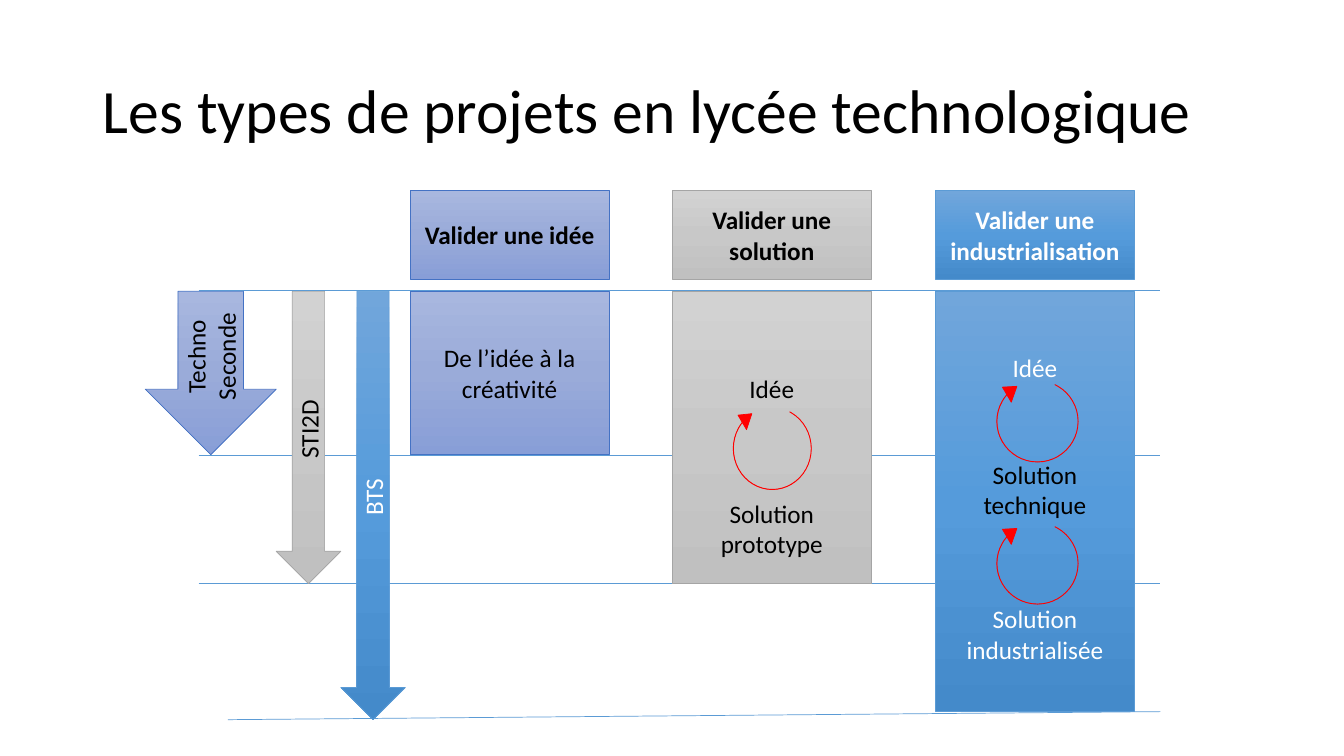
from copy import deepcopy

from lxml import etree
from pptx import Presentation
from pptx.dml.color import RGBColor
from pptx.enum.shapes import MSO_CONNECTOR, MSO_SHAPE
from pptx.enum.text import MSO_ANCHOR, MSO_AUTO_SIZE, PP_ALIGN
from pptx.oxml.ns import qn
from pptx.util import Inches, Pt

RECT, DOWN_ARROW, LOOP = MSO_SHAPE.RECTANGLE, MSO_SHAPE.DOWN_ARROW, MSO_SHAPE.CIRCULAR_ARROW
STRAIGHT = MSO_CONNECTOR.STRAIGHT
LEFT, CENTER = PP_ALIGN.LEFT, PP_ALIGN.CENTER
TOP, MIDDLE = MSO_ANCHOR.TOP, MSO_ANCHOR.MIDDLE
NO_FIT, GROW = MSO_AUTO_SIZE.NONE, MSO_AUTO_SIZE.SHAPE_TO_FIT_TEXT

COLORS = {"black": "000000", "white": "FFFFFF", "red": "FF0000", "rule": "5B9BD5"}
# Each theme: gradient from top to bottom, outline, text colour
THEMES = {
    "idea": (("A8B7DF", "9AABD9", "889ED7"), "4472C4", "black"),
    "solution": (("D2D2D2", "C8C8C8", "C0C0C0"), "A5A5A5", "black"),
    "industry": (("71A6DB", "559BDB", "448ACA"), "5B9BD5", "white"),
}
LOOP_ADJUSTMENTS = (0.002, 11.119, 132.616, 177.326, 0.089)

BODY_TOP, HEADER_TOP = 2.89, 1.89
COLUMN_W, HEADER_H = 1.97, 0.88
RULE_LEFT, RULE_RIGHT = 1.97, 11.51


class Deck:
    font = "Calibri"

    def __init__(self):
        self.prs = Presentation()
        self.prs.slide_width, self.prs.slide_height = Inches(13.33), Inches(7.5)
        self.s = self.prs.slides.add_slide(self.prs.slide_layouts[5])

    def set_text(self, sp, text, color, size=18, bold=False, align=CENTER, anchor=MIDDLE):
        tf = sp.text_frame
        tf.text = text
        tf.word_wrap = True
        tf.vertical_anchor = anchor
        for p in tf.paragraphs:
            p.alignment = align
            for r in p.runs:
                r.font.name, r.font.size, r.font.bold = self.font, Pt(size), bold
                r.font.color.rgb = RGBColor.from_string(COLORS[color])
        return tf

    def title(self, text):
        sp = self.s.shapes.title
        sp.left, sp.top, sp.width, sp.height = map(Inches, (0.92, 0.4, 11.5, 1.45))
        tf = self.set_text(sp, text, "black", size=44, align=LEFT)
        tf.auto_size = NO_FIT
        tf.paragraphs[0].line_spacing = 0.9

    def shape(self, kind, box, outline):
        sp = self.s.shapes.add_shape(kind, *map(Inches, box))
        sp.shadow.inherit = False
        sp.line.color.rgb = RGBColor.from_string(outline)
        sp.line.width = Pt(0.5)
        return sp

    def block(self, kind, box, theme, text="", bold=False, vertical=False):
        stops, outline, color = THEMES[theme]
        sp = self.shape(kind, box, outline)
        sp.fill.gradient()
        sp.fill.gradient_angle = 270
        first = sp._element.spPr.find(".//" + qn("a:gs"))
        first.addnext(deepcopy(first))
        for i, (stop, shade) in enumerate(zip(sp.fill.gradient_stops, stops)):
            stop.position = i / 2
            stop.color.rgb = RGBColor.from_string(shade)
        if text:
            tf = self.set_text(sp, text, color, bold=bold)
            if vertical:
                tf._txBody.bodyPr.set("vert", "vert270")

    def label(self, box, text, color):
        sp = self.s.shapes.add_textbox(*map(Inches, box))
        self.set_text(sp, text, color, anchor=TOP).auto_size = GROW

    def loop(self, box):
        sp = self.shape(LOOP, box, COLORS["red"])
        sp.fill.solid()
        sp.fill.fore_color.rgb = RGBColor.from_string(COLORS["red"])
        for i, value in enumerate(LOOP_ADJUSTMENTS):
            sp.adjustments[i] = value

    def rule(self, x1, y1, x2, y2, width=0.5):
        line = self.s.shapes.add_connector(STRAIGHT, *map(Inches, (x1, y1, x2, y2)))
        line.line.color.rgb = RGBColor.from_string(COLORS["rule"])
        line.line.width = Pt(width)
        etree.SubElement(line._element.spPr, qn("a:effectLst"))


def main():
    deck = Deck()
    deck.title("Les types de projets en lycée technologique")

    for y in (4.52, 5.79):
        deck.rule(RULE_LEFT, y, RULE_RIGHT, y)
    deck.rule(2.26, 7.14, RULE_RIGHT, 7.06)

    columns = (
        ("idea", 4.07, 1.62, "Valider une idée", "De l’idée à la créativité"),
        ("solution", 6.67, 2.9, "Valider une solution", ""),
        ("industry", 9.28, 4.17, "Valider une industrialisation", ""),
    )
    for theme, x, height, header, body in columns:
        deck.block(RECT, (x, HEADER_TOP, COLUMN_W, HEADER_H), theme, header, bold=True)
        deck.block(RECT, (x, BODY_TOP, COLUMN_W, height), theme, body)

    levels = (
        ("idea", 1.44, 1.3, 1.62, "Techno\nSeconde"),
        ("solution", 2.74, 0.64, 2.9, "STI2D"),
        ("industry", 3.38, 0.64, 4.25, "BTS"),
    )
    for theme, x, width, height, name in levels:
        deck.block(DOWN_ARROW, (x, BODY_TOP, width, height), theme, name, vertical=True)

    steps = (
        (6.67, 3.65, 0.4, "Idée", "black"),
        (6.67, 4.89, 0.71, "Solution prototype", "black"),
        (9.28, 3.45, 0.4, "Idée", "white"),
        (9.28, 4.51, 0.71, "Solution technique", "black"),
        (9.28, 5.94, 0.71, "Solution\nindustrialisée", "white"),
    )
    for x, y, height, text, color in steps:
        deck.label((x, y, COLUMN_W, height), text, color)

    for x, y, width in ((7.19, 3.96, 0.94), (9.8, 3.69, 0.98), (9.8, 5.1, 0.98)):
        deck.loop((x, y, width, 0.98))

    deck.rule(RULE_LEFT, 2.88, RULE_RIGHT, 2.88, width=1)
    deck.prs.save("out.pptx")


if __name__ == "__main__":
    main()
